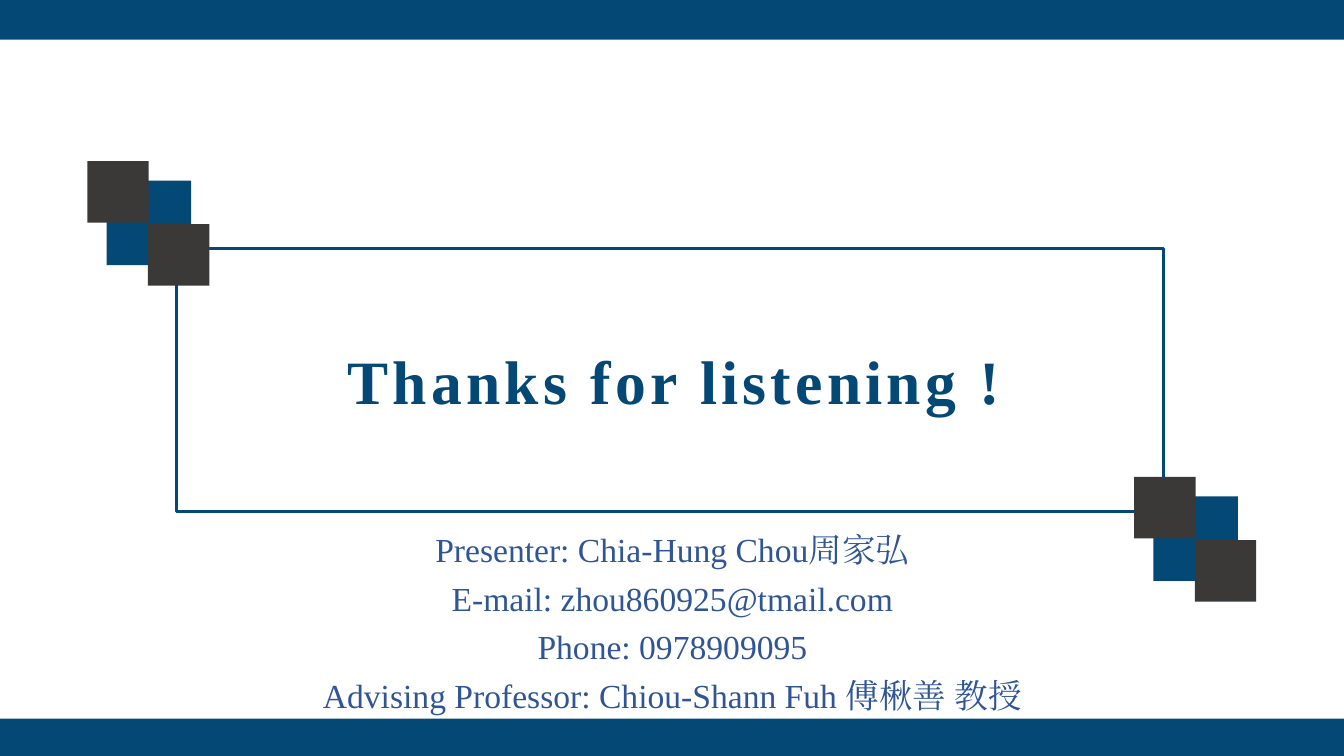
from typing import Any, NamedTuple

from lxml.etree import SubElement
from pptx import Presentation
from pptx.dml.color import RGBColor
from pptx.enum.shapes import MSO_SHAPE
from pptx.enum.text import MSO_ANCHOR, PP_ALIGN
from pptx.oxml.ns import qn
from pptx.util import Cm, Pt

NAVY, CHARCOAL, CONTACT_BLUE = "044875", "3B3838", "2F5597"
FONT = "Times New Roman"
SLIDE_WIDTH, SLIDE_HEIGHT = 33.87, 19.05


class Box(NamedTuple):
    left: float
    top: float
    width: float
    height: float

    def lengths(self) -> tuple:
        return tuple(Cm(value) for value in self)


class Square(NamedTuple):
    """A square of a corner ornament, offset from the ornament's corner."""
    dx: float
    dy: float
    side: float
    color: str


TITLE_BOX = Box(4.55, 8.5, 24.9, 2.13)
FRAME = Box(4.44, 6.26, 24.89, 6.63)
CONTACT_BOX = Box(4.5, 13.2, 24.89, 4.9)
BANDS = (
    Box(0, -0.03, SLIDE_WIDTH, 1.03),
    Box(0, 18.11, SLIDE_WIDTH, 0.94),
)
ORNAMENT = (
    Square(0.49, 0.49, 2.13, NAVY),
    Square(0, 0, 1.55, CHARCOAL),
    Square(1.53, 1.59, 1.55, CHARCOAL),
)
ORNAMENT_CORNERS = ((28.58, 12.02), (2.2, 4.06))
CONTACT_LINES = (
    "Presenter: Chia-Hung Chou周家弘",
    "E-mail: zhou860925@tmail.com",
    "Phone: 0978909095",
    "Advising Professor: Chiou-Shann Fuh 傅楸善 教授",
)
TITLE_FORMAT = {"name": FONT, "size": Pt(44), "bold": True}
CONTACT_FORMAT = {"name": FONT, "size": Pt(24), "bold": False}


def rgb(color: str) -> RGBColor:
    return RGBColor.from_string(color)


def set_attributes(target: Any, values: dict) -> None:
    for name, value in values.items():
        setattr(target, name, value)


def write_line(paragraph: Any, text: str, values: dict, color: str) -> Any:
    """Write one centred run, using its font for Chinese characters too."""
    paragraph.alignment = PP_ALIGN.CENTER
    run = paragraph.add_run()
    run.text = text
    set_attributes(run.font, values)
    run.font.color.rgb = rgb(color)
    SubElement(run.font._element, qn("a:ea"), typeface=FONT)
    return run


def add_rectangle(shapes: Any, box: Box, color: str) -> Any:
    rectangle = shapes.add_shape(MSO_SHAPE.RECTANGLE, *box.lengths())
    rectangle.shadow.inherit = False
    rectangle.fill.solid()
    rectangle.fill.fore_color.rgb = rgb(color)
    rectangle.line.fill.background()
    return rectangle


def add_title(slide: Any) -> None:
    title = slide.shapes.title
    set_attributes(title, dict(zip(Box._fields, TITLE_BOX.lengths())))
    set_attributes(title.text_frame, {"word_wrap": True, "vertical_anchor": MSO_ANCHOR.MIDDLE})
    run = write_line(title.text_frame.paragraphs[0], "Thanks for listening !", TITLE_FORMAT, NAVY)
    run.font._element.set("spc", "300")


def add_frame(slide: Any) -> None:
    frame = add_rectangle(slide.shapes, FRAME, NAVY)
    frame.fill.background()
    frame.line.color.rgb = rgb(NAVY)
    frame.line.width = Pt(2)


def add_ornament(slide: Any, left: float, top: float) -> None:
    group = slide.shapes.add_group_shape()
    for square in ORNAMENT:
        box = Box(left + square.dx, top + square.dy, square.side, square.side)
        add_rectangle(group.shapes, box, square.color)


def add_contact(slide: Any) -> None:
    frame = slide.shapes.add_textbox(*CONTACT_BOX.lengths()).text_frame
    frame.word_wrap = True
    for index, line in enumerate(CONTACT_LINES):
        paragraph = frame.add_paragraph() if index else frame.paragraphs[0]
        if index:
            paragraph.space_before = Pt(6)
        write_line(paragraph, line, CONTACT_FORMAT, CONTACT_BLUE)


def main() -> None:
    deck = Presentation()
    deck.slide_width, deck.slide_height = Cm(SLIDE_WIDTH), Cm(SLIDE_HEIGHT)
    slide = deck.slides.add_slide(deck.slide_layouts.get_by_name("Title Only"))
    add_title(slide)
    add_frame(slide)
    for corner in ORNAMENT_CORNERS:
        add_ornament(slide, *corner)
    for band in BANDS:
        add_rectangle(slide.shapes, band, NAVY)
    add_contact(slide)
    deck.save("out.pptx")


if __name__ == "__main__":
    main()
